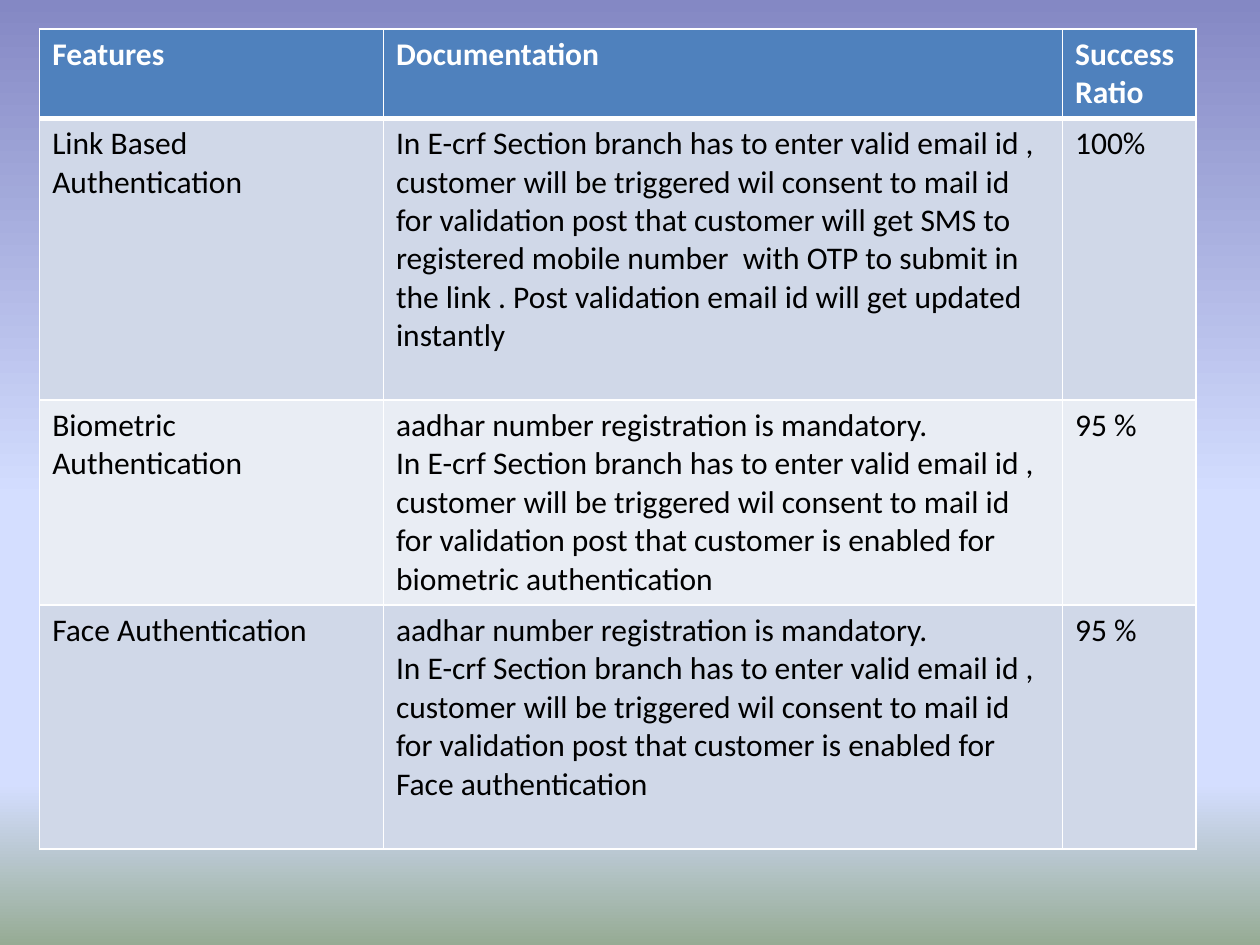
from copy import deepcopy
from typing import NamedTuple

from lxml.etree import SubElement
from pptx import Presentation
from pptx.dml.color import RGBColor
from pptx.oxml.ns import qn
from pptx.slide import Slide
from pptx.table import _Cell as Cell
from pptx.util import Cm, Pt

WHITE = RGBColor(0xFF, 0xFF, 0xFF)
BLACK = RGBColor(0x00, 0x00, 0x00)
HEADER_BLUE = RGBColor(0x4F, 0x81, 0xBD)
BAND_DARK = RGBColor(0xD0, 0xD8, 0xE8)
BAND_LIGHT = RGBColor(0xE9, 0xED, 0xF4)
BACKGROUND_STOPS = [
    (0, RGBColor(0x84, 0x88, 0xC4)),
    (0.53, RGBColor(0xD4, 0xDE, 0xFF)),
    (0.83, RGBColor(0xD4, 0xDE, 0xFF)),
    (1, RGBColor(0x96, 0xAB, 0x94)),
]

FONT = "Calibri"
COLUMN_WIDTHS = [6.93, 13.69, 2.69]
CONSENT = (
    "In E-crf Section branch has to enter valid email id , customer will be "
    "triggered wil consent to mail id for validation post that customer "
)
AADHAR = "aadhar number registration is mandatory.\n"


class FeatureRow(NamedTuple):
    feature: str
    documentation: str
    success_ratio: str
    height: float


ROWS = [
    FeatureRow("Features", "Documentation", "Success Ratio", 1.8),
    FeatureRow(
        "Link Based Authentication",
        CONSENT + "will get SMS to registered mobile number  with OTP to submit in "
        "the link . Post validation email id will get updated  instantly",
        "100%",
        5.68,
    ),
    FeatureRow(
        "Biometric Authentication",
        AADHAR + CONSENT + "is enabled for biometric authentication",
        "95 %",
        4.12,
    ),
    FeatureRow(
        "Face Authentication",
        AADHAR + CONSENT + "is enabled for Face authentication",
        "95 %",
        4.92,
    ),
]


def paint_background(slide: Slide) -> None:
    fill = slide.background.fill
    fill.gradient()
    fill.gradient_angle = 270
    stop_list = slide.element.find(".//" + qn("a:gsLst"))
    for _ in range(len(BACKGROUND_STOPS) - len(stop_list)):
        stop_list.append(deepcopy(stop_list[0]))
    for stop, (position, color) in zip(fill.gradient_stops, BACKGROUND_STOPS):
        stop.position = position
        stop.color.rgb = color


def add_border(cell: Cell, side: str, width: int) -> None:
    properties = cell._tc.get_or_add_tcPr()
    line = SubElement(properties, qn(f"a:ln{side}"), w=str(Pt(width)))
    color_fill = SubElement(line, qn("a:solidFill"))
    SubElement(color_fill, qn("a:srgbClr"), val=str(WHITE))


def format_cell(cell: Cell, text: str, row_index: int) -> None:
    is_header = row_index == 0
    border_widths = {
        "L": 1,
        "R": 1,
        "T": 3 if row_index == 1 else 1,
        "B": 3 if is_header else 1,
    }
    for side, width in border_widths.items():
        add_border(cell, side, width)
    cell.fill.solid()
    band = BAND_DARK if row_index % 2 else BAND_LIGHT
    cell.fill.fore_color.rgb = HEADER_BLUE if is_header else band
    cell.text_frame.text = text
    for paragraph in cell.text_frame.paragraphs:
        for run in paragraph.runs:
            run.font.name = FONT
            run.font.size = Pt(18)
            run.font.bold = is_header
            run.font.color.rgb = WHITE if is_header else BLACK


def add_feature_table(slide: Slide, rows: list[FeatureRow]) -> None:
    table = slide.shapes.add_table(
        len(rows),
        len(COLUMN_WIDTHS),
        Cm(0.8),
        Cm(0.58),
        Cm(sum(COLUMN_WIDTHS)),
        Cm(sum(row.height for row in rows)),
    ).table
    for column, width in zip(table.columns, COLUMN_WIDTHS):
        column.width = Cm(width)
    for row_index, row in enumerate(rows):
        table.rows[row_index].height = Cm(row.height)
        texts = (row.feature, row.documentation, row.success_ratio)
        for column_index, text in enumerate(texts):
            format_cell(table.cell(row_index, column_index), text, row_index)


def main() -> None:
    presentation = Presentation()
    presentation.slide_width = Cm(25.4)
    presentation.slide_height = Cm(19.05)
    slide = presentation.slides.add_slide(presentation.slide_layouts[6])
    paint_background(slide)
    add_feature_table(slide, ROWS)
    presentation.save("out.pptx")


if __name__ == "__main__":
    main()
